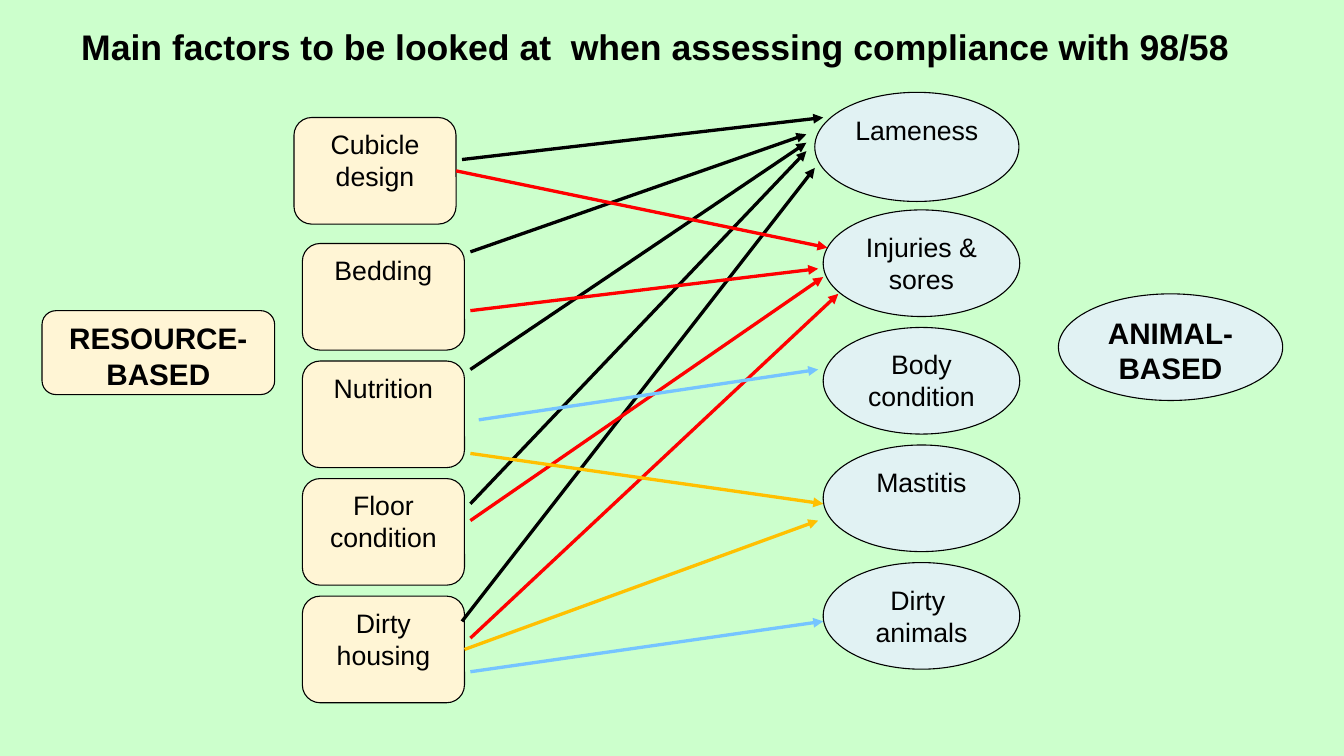
import pptx
import pptx.util
import pptx.dml.color
import pptx.enum.shapes
import pptx.enum.text
import pptx.oxml.ns
import lxml.etree

WIDTH, HEIGHT = 12.6, 7.09
UNIT = WIDTH / 160  # the grid has 160 columns and 90 rows
STEP = 14           # rows from one factor to the next
FACTOR_HEIGHT = 12.7

COLORS = {
    "page": "CCFFCC", "resource": "FFF5D5", "animal": "E1F2F3",
    "black": "000000", "red": "FF0000", "blue": "75C4FF", "amber": "FFC000",
}
ROUNDED = pptx.enum.shapes.MSO_SHAPE.ROUNDED_RECTANGLE
OVAL = pptx.enum.shapes.MSO_SHAPE.OVAL

# label, column, row, width
RESOURCES = [("Cubicle design", 35, 14, 19.3)] + [
    (label, 36, 29 + STEP * index, 19.3)
    for index, label in enumerate(
        ["Bedding", "Nutrition", "Floor condition", "Dirty housing"])
]
# label, column, row, width, height
ANIMALS = [("Lameness", 97, 11, 24.3, 13)] + [
    (label, 98, 25 + STEP * index, 23.4, FACTOR_HEIGHT)
    for index, label in enumerate(
        ["Injuries & sores", "Body condition", "Mastitis", "Dirty  animals"])
]

# colour, start column and row, end column and row
ARROWS = [
    ("black", 55, 19, 98, 14),
    ("black", 56, 30, 96, 16),
    ("black", 56, 44, 96, 17),
    ("black", 56, 60, 96, 18),
    ("black", 55, 74, 97, 20),
    ("red", 56, 37, 97.4, 32),
    ("red", 56, 62, 98, 33),
    ("red", 56, 76, 99.8, 35),
    ("blue", 57, 50, 97.4, 44),
    ("blue", 56, 80, 98, 74),
    ("amber", 56, 54, 98, 60),
]
# resource whose right side starts the arrow, colour, end column and row
JOINED_ARROWS = [
    ("Cubicle design", "red", 98.5, 29.5),
    ("Dirty housing", "amber", 97.4, 62),
]


def grid(*counts):
    return [pptx.util.Inches(count * UNIT) for count in counts]


def color(name):
    return pptx.dml.color.RGBColor.from_string(COLORS[name])


def write(frame, text, size=18, bold=False):
    frame.word_wrap = True
    para = frame.paragraphs[0]
    para.alignment = pptx.enum.text.PP_ALIGN.CENTER
    span = para.add_run()
    span.text = text
    span.font.name = "Arial"
    span.font.size = pptx.util.Pt(size)
    span.font.bold = bold
    span.font.color.rgb = color("black")


def add_title(page, text):
    title = page.shapes.title
    title.left, title.top, title.width, title.height = grid(6, 1.5, 144, 8)
    frame = title.text_frame
    frame.vertical_anchor = pptx.enum.text.MSO_ANCHOR.MIDDLE
    frame.margin_left = frame.margin_right = pptx.util.Inches(0.11)
    frame.margin_top = frame.margin_bottom = pptx.util.Inches(0.06)
    write(frame, text, size=24, bold=True)


def add_box(page, kind, fill, label, column, row, width,
            height=FACTOR_HEIGHT, **text_format):
    box = page.shapes.add_shape(kind, *grid(column, row, width, height))
    box.shadow.inherit = False
    box.fill.solid()
    box.fill.fore_color.rgb = color(fill)
    box.line.color.rgb = color("black")
    box.line.width = pptx.util.Pt(0.75)
    box.text_frame.vertical_anchor = pptx.enum.text.MSO_ANCHOR.TOP
    write(box.text_frame, label, **text_format)
    return box


def add_arrow(page, name, *ends):
    arrow = page.shapes.add_connector(
        pptx.enum.shapes.MSO_CONNECTOR.STRAIGHT, *grid(*ends))
    arrow.line.color.rgb = color(name)
    arrow.line.width = pptx.util.Pt(2.25)
    qualified = pptx.oxml.ns.qn
    line = arrow.line._get_or_add_ln()
    lxml.etree.SubElement(line, qualified("a:tailEnd"), type="triangle")
    lxml.etree.SubElement(arrow._element.spPr, qualified("a:effectLst"))
    return arrow


def main():
    deck = pptx.Presentation()
    deck.slide_width = pptx.util.Inches(WIDTH)
    deck.slide_height = pptx.util.Inches(HEIGHT)
    page = deck.slides.add_slide(deck.slide_layouts[5])
    page.background.fill.solid()
    page.background.fill.fore_color.rgb = color("page")
    add_title(page, "Main factors to be looked at  when assessing "
                    "compliance with 98/58")

    # Group headings
    add_box(page, ROUNDED, "resource", "RESOURCE- BASED", 5, 37, 27.7, 10,
            size=20, bold=True)
    add_box(page, OVAL, "animal", "ANIMAL- BASED", 126, 35, 26.7,
            size=20, bold=True)

    # Factors
    resources = {}
    for label, *place in RESOURCES:
        resources[label] = add_box(page, ROUNDED, "resource", label, *place)
    for label, *place in ANIMALS:
        add_box(page, OVAL, "animal", label, *place)

    # Links from resources to animals
    for name, *ends in ARROWS:
        add_arrow(page, name, *ends)
    for label, name, column, row in JOINED_ARROWS:
        arrow = add_arrow(page, name, 0, 0, column, row)
        arrow.begin_connect(resources[label], 3)

    deck.save("out.pptx")


if __name__ == "__main__":
    main()
